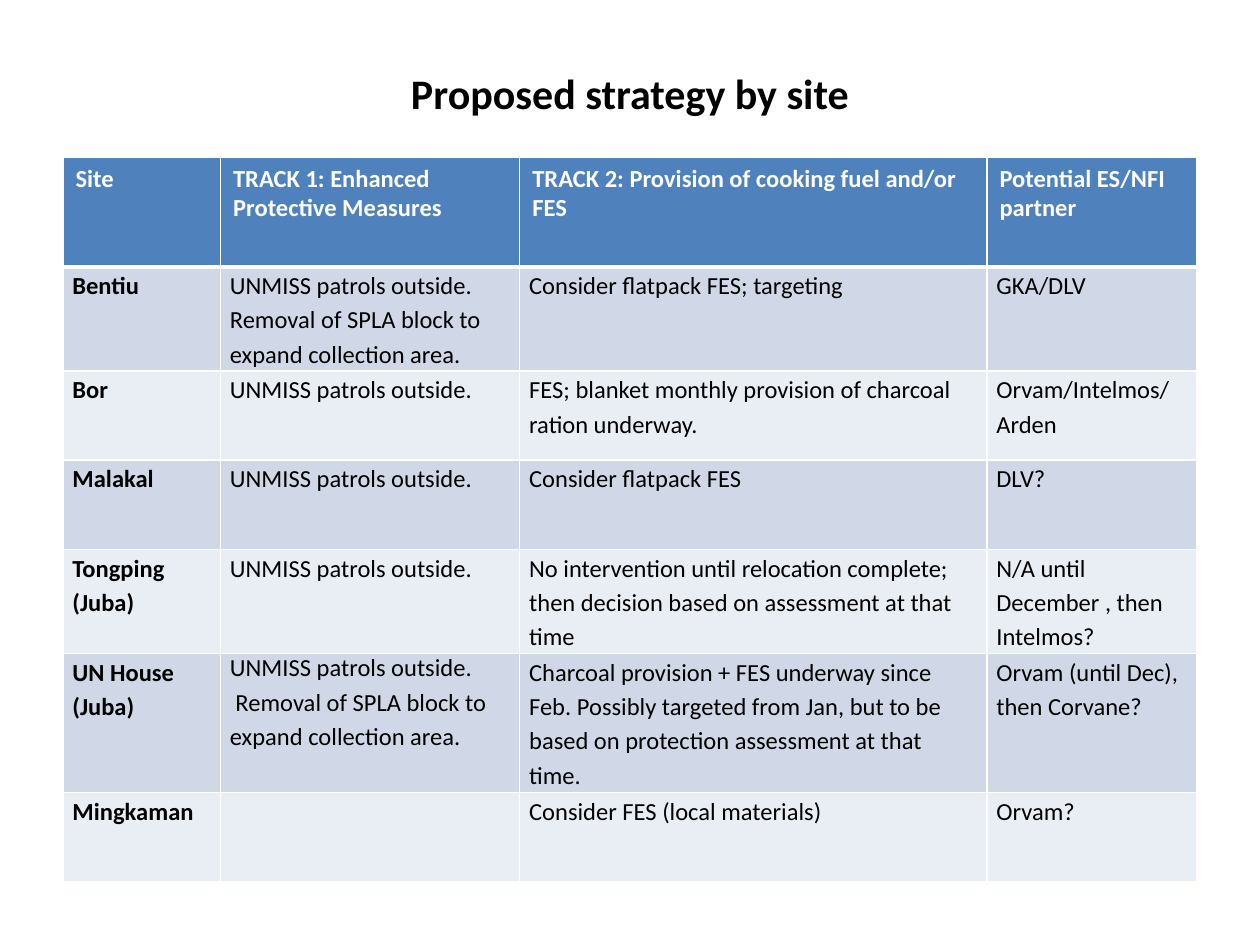
"""Build the slide that sets out the proposed strategy by site."""
import lxml.etree
import pptx
import pptx.dml.color
import pptx.enum.text
import pptx.oxml.ns
import pptx.util

Pt = pptx.util.Pt

HEADING = "Proposed strategy by site"
COLUMNS = [
    ("Site", 90),
    ("TRACK 1: Enhanced Protective Measures", 171),
    ("TRACK 2: Provision of cooking fuel and/or FES", 267),
    ("Potential ES/NFI partner", 120),
]
HEADER_HEIGHT = 62.5
PATROLS = "UNMISS patrols outside."
SITES = [
    (59.5, "Bentiu", PATROLS + " Removal of SPLA block to expand collection area.",
     "Consider flatpack FES; targeting", "GKA/DLV"),
    (51, "Bor", PATROLS,
     "FES; blanket monthly provision of charcoal ration underway.",
     "Orvam/Intelmos/ Arden"),
    (51, "Malakal", PATROLS, "Consider flatpack FES", "DLV?"),
    (59.5, "Tongping (Juba)", PATROLS,
     "No intervention until relocation complete; then decision based on "
     "assessment at that time", "N/A until December , then Intelmos?"),
    (79.5, "UN House (Juba)",
     PATROLS + "\n Removal of SPLA block to expand collection area.",
     "Charcoal provision + FES underway since Feb. Possibly targeted from Jan, "
     "but to be based on protection assessment at that time.",
     "Orvam (until Dec), then Corvane?"),
    (51, "Mingkaman", "", "Consider FES (local materials)", "Orvam?"),
]
THEME = {
    "font": "Calibri", "title_size": 24, "table_size": 14,
    "ink": "000000", "paper": "FFFFFF", "header": "4F81BD",
    "bands": ("D0D8E8", "E9EDF4"),
    "rule": 1, "header_rule": 3, "spacing": 1.15,
}
SLIDE_SIZE = (720, 540)
TITLE_BOX = (36, 21.6, 648, 62.6)
TABLE_ORIGIN = (36, 90)
BODY_INSET = 5.4


def rgb(name):
    return pptx.dml.color.RGBColor.from_string(THEME[name] if name in THEME else name)


def style_runs(paragraph, size, color, bold):
    for run in paragraph.runs:
        run.font.name = THEME["font"]
        run.font.size = Pt(size)
        run.font.bold = bold
        run.font.color.rgb = rgb(color)


def add_borders(cell, top, bottom):
    properties = cell._tc.get_or_add_tcPr()
    widths = {"L": THEME["rule"], "R": THEME["rule"], "T": top, "B": bottom}
    for side, width in widths.items():
        border = lxml.etree.SubElement(
            properties, pptx.oxml.ns.qn("a:ln" + side), w=str(Pt(width)))
        fill = lxml.etree.SubElement(border, pptx.oxml.ns.qn("a:solidFill"))
        lxml.etree.SubElement(fill, pptx.oxml.ns.qn("a:srgbClr"), val=THEME["paper"])


def fill_cell(cell, text, row, column):
    is_header = row == 0
    add_borders(cell,
                THEME["header_rule"] if row == 1 else THEME["rule"],
                THEME["header_rule"] if is_header else THEME["rule"])
    cell.fill.solid()
    cell.fill.fore_color.rgb = rgb("header" if is_header else THEME["bands"][(row - 1) % 2])
    cell.text_frame.text = text
    if not is_header:
        cell.margin_left = cell.margin_right = Pt(BODY_INSET)
        cell.margin_top = cell.margin_bottom = 0
    paragraphs = cell.text_frame.paragraphs
    for paragraph in paragraphs:
        style_runs(paragraph, THEME["table_size"], "paper" if is_header else "ink",
                   is_header or column == 0)
    if not is_header:
        paragraphs[-1].line_spacing = THEME["spacing"]


def add_title(slide):
    title = slide.shapes.title
    title.left, title.top, title.width, title.height = map(Pt, TITLE_BOX)
    title.text_frame.text = HEADING
    title.text_frame.vertical_anchor = pptx.enum.text.MSO_ANCHOR.MIDDLE
    heading = title.text_frame.paragraphs[0]
    heading.alignment = pptx.enum.text.PP_ALIGN.CENTER
    style_runs(heading, THEME["title_size"], "ink", True)


def add_strategy_table(slide):
    headers = [header for header, _ in COLUMNS]
    widths = [width for _, width in COLUMNS]
    rows = [(HEADER_HEIGHT, *headers), *SITES]
    size = sum(widths), sum(row[0] for row in rows)
    strategy = slide.shapes.add_table(
        len(rows), len(COLUMNS), *map(Pt, TABLE_ORIGIN + size)).table
    for column, width in zip(strategy.columns, widths):
        column.width = Pt(width)
    for row, (height, *texts) in enumerate(rows):
        strategy.rows[row].height = Pt(height)
        for column, text in enumerate(texts):
            fill_cell(strategy.cell(row, column), text, row, column)


def main():
    deck = pptx.Presentation()
    deck.slide_width, deck.slide_height = map(Pt, SLIDE_SIZE)
    slide = deck.slides.add_slide(deck.slide_layouts[5])
    add_title(slide)
    add_strategy_table(slide)
    deck.save("out.pptx")


if __name__ == "__main__":
    main()
